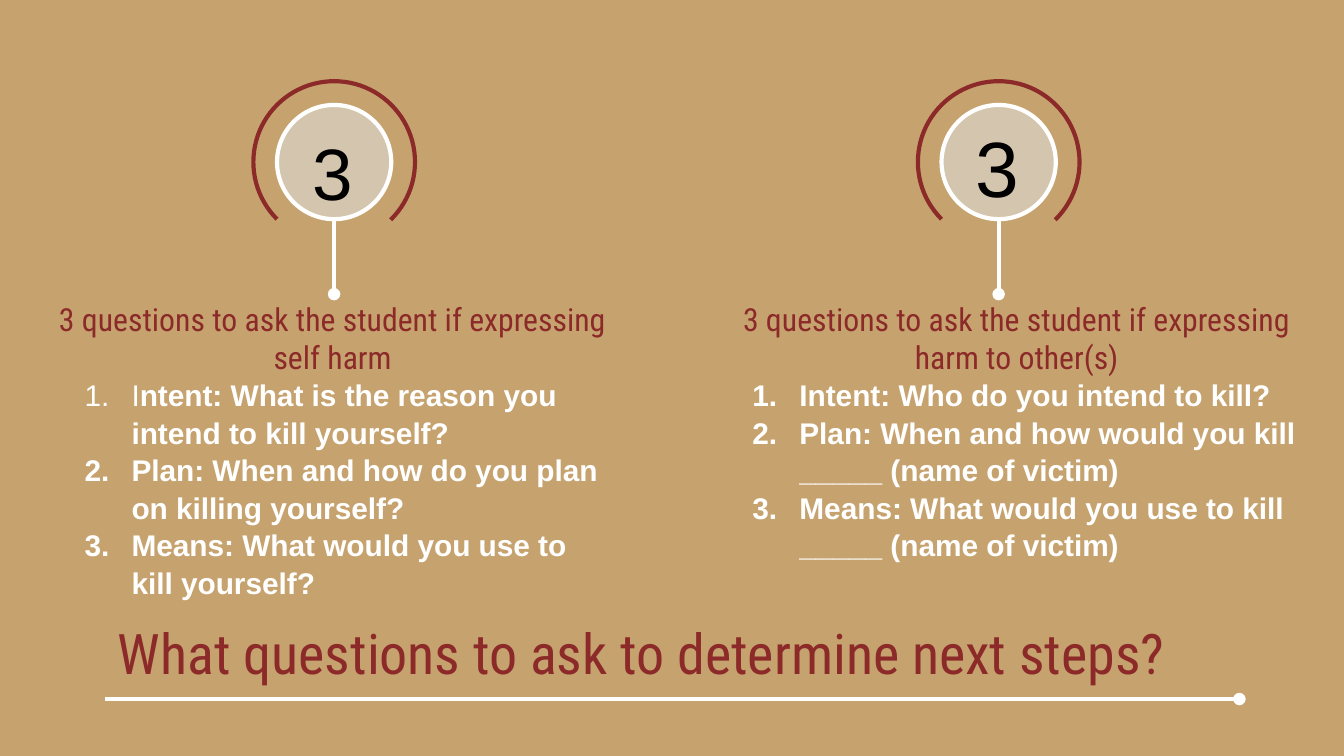
"""Build the slide on questions that determine next steps for a student."""
from lxml import etree
from pptx import Presentation
from pptx.dml.color import RGBColor
from pptx.enum.shapes import MSO_CONNECTOR, MSO_SHAPE
from pptx.enum.text import MSO_ANCHOR, MSO_AUTO_SIZE, PP_ALIGN
from pptx.oxml.ns import qn
from pptx.util import Pt

ARC, OVAL, STRAIGHT = MSO_SHAPE.ARC, MSO_SHAPE.OVAL, MSO_CONNECTOR.STRAIGHT
TOP, BOTTOM = MSO_ANCHOR.TOP, MSO_ANCHOR.BOTTOM
LEFT, CENTER = PP_ALIGN.LEFT, PP_ALIGN.CENTER
TAN = RGBColor(0xC6, 0xA3, 0x6E)
SAND = RGBColor(0xD4, 0xC6, 0xAE)
MAROON = RGBColor(0x8C, 0x2A, 0x2A)
WHITE = RGBColor(0xFF, 0xFF, 0xFF)
BLACK = RGBColor(0, 0, 0)
HEADING = {"name": "Roboto Condensed", "size": Pt(17), "bold": False}
HEADLINE = {**HEADING, "size": Pt(30)}
QUESTION = {"name": "Arial", "size": Pt(16)}


def write(holder, paragraphs, style, color, align, anchor=TOP, spacing=1.0, numbered=False):
    """Fill a text holder with paragraphs, each a list of (text, bold) runs."""
    frame = holder.text_frame
    frame.word_wrap = True
    frame.auto_size = MSO_AUTO_SIZE.NONE
    frame.vertical_anchor = anchor
    for side in ("left", "top", "right", "bottom"):
        setattr(frame, f"margin_{side}", Pt(7.2))
    for index, runs in enumerate(paragraphs):
        paragraph = frame.paragraphs[0] if index == 0 else frame.add_paragraph()
        paragraph.alignment = align
        paragraph.line_spacing = spacing
        if numbered:
            properties = paragraph._p.get_or_add_pPr()
            properties.set("marL", str(Pt(36)))
            properties.set("indent", str(-Pt(25.2)))
            bullet_color = etree.SubElement(properties, qn("a:buClr"))
            etree.SubElement(bullet_color, qn("a:srgbClr"), val=str(color))
            etree.SubElement(properties, qn("a:buFont"), typeface="Arial")
            etree.SubElement(properties, qn("a:buAutoNum"), type="arabicPeriod")
        for text, bold in runs:
            run = paragraph.add_run()
            run.text = text
            for key, value in {**style, "bold": bold}.items():
                setattr(run.font, key, value)
            run.font.color.rgb = color


def dotted_line(x1, y1, x2, y2):
    """Draw a white line that ends in a dot."""
    connector = slide.shapes.add_connector(STRAIGHT, Pt(x1), Pt(y1), Pt(x2), Pt(y2))
    connector.line.color.rgb = WHITE
    connector.line.width = Pt(2.25)
    etree.SubElement(connector.line._get_or_add_ln(), qn("a:tailEnd"), type="oval")
    etree.SubElement(connector._element.spPr, qn("a:effectLst"))


prs = Presentation()
prs.slide_width, prs.slide_height = Pt(720), Pt(405)
slide = prs.slides.add_slide(prs.slide_layouts[5])
slide.background.fill.solid()
slide.background.fill.fore_color.rgb = TAN

headline = slide.shapes.title
headline.left, headline.top, headline.width, headline.height = Pt(56), Pt(321), Pt(608), Pt(53.5)
write(headline, [[("What questions to ask to determine next steps?", False)]],
      HEADLINE, MAROON, LEFT, BOTTOM)
dotted_line(56, 374.5, 664, 374.5)

topics = [
    {
        "center": 179, "digit_center": 178.5, "digit_top": 57.6, "digit_size": 39,
        "heading": "3 questions to ask the student if expressing self harm",
        "heading_box": (21.6, 313.2), "question_box": (27.4, 307.4),
        "questions": [
            [("I", False), ("ntent: What is the reason you intend to kill yourself?", True)],
            [("Plan: When and how do you plan on killing yourself?", True)],
            [("Means: What would you use to kill yourself?", True)],
        ],
    },
    {
        "center": 535, "digit_center": 534.5, "digit_top": 52.6, "digit_size": 42,
        "heading": "3 questions to ask the student if expressing harm to other(s)",
        "heading_box": (385.2, 319), "question_box": (385.2, 326.9),
        "questions": [
            [("Intent: Who do you intend to kill?", True)],
            [("Plan: When and how would you kill _____ (name of victim)", True)],
            [("Means: What would you use to kill _____ (name of victim)", True)],
        ],
    },
]

for topic in topics:
    center = topic["center"]
    for kind, size, line_color in ((ARC, 86.6, MAROON), (OVAL, 61.2, WHITE)):
        ring = slide.shapes.add_shape(
            kind, Pt(center - size / 2), Pt(86.8 - size / 2), Pt(size), Pt(size))
        ring.shadow.inherit = False
        ring.line.color.rgb = line_color
        ring.line.width = Pt(2.25)
        if kind == ARC:
            ring.fill.background()
            ring.adjustments[0], ring.adjustments[1] = 162, 108.39
            ring.rotation = 225
        else:
            ring.fill.solid()
            ring.fill.fore_color.rgb = SAND
    dotted_line(center, 117.4, center, 157.6)

    digit = slide.shapes.add_textbox(
        Pt(topic["digit_center"] - 21.25), Pt(topic["digit_top"]), Pt(42.5), Pt(44))
    write(digit, [[("3", False)]], {"name": "Arial", "size": Pt(topic["digit_size"])},
          BLACK, CENTER, spacing=1.08)

    left, width = topic["heading_box"]
    heading = slide.shapes.add_textbox(Pt(left), Pt(153.4), Pt(width), Pt(44))
    write(heading, [[(topic["heading"], False)]], HEADING, MAROON, CENTER)

    left, width = topic["question_box"]
    questions = slide.shapes.add_textbox(Pt(left), Pt(193.7), Pt(width), Pt(131))
    write(questions, topic["questions"], QUESTION, WHITE, LEFT, spacing=1.05, numbered=True)

prs.save("out.pptx")
